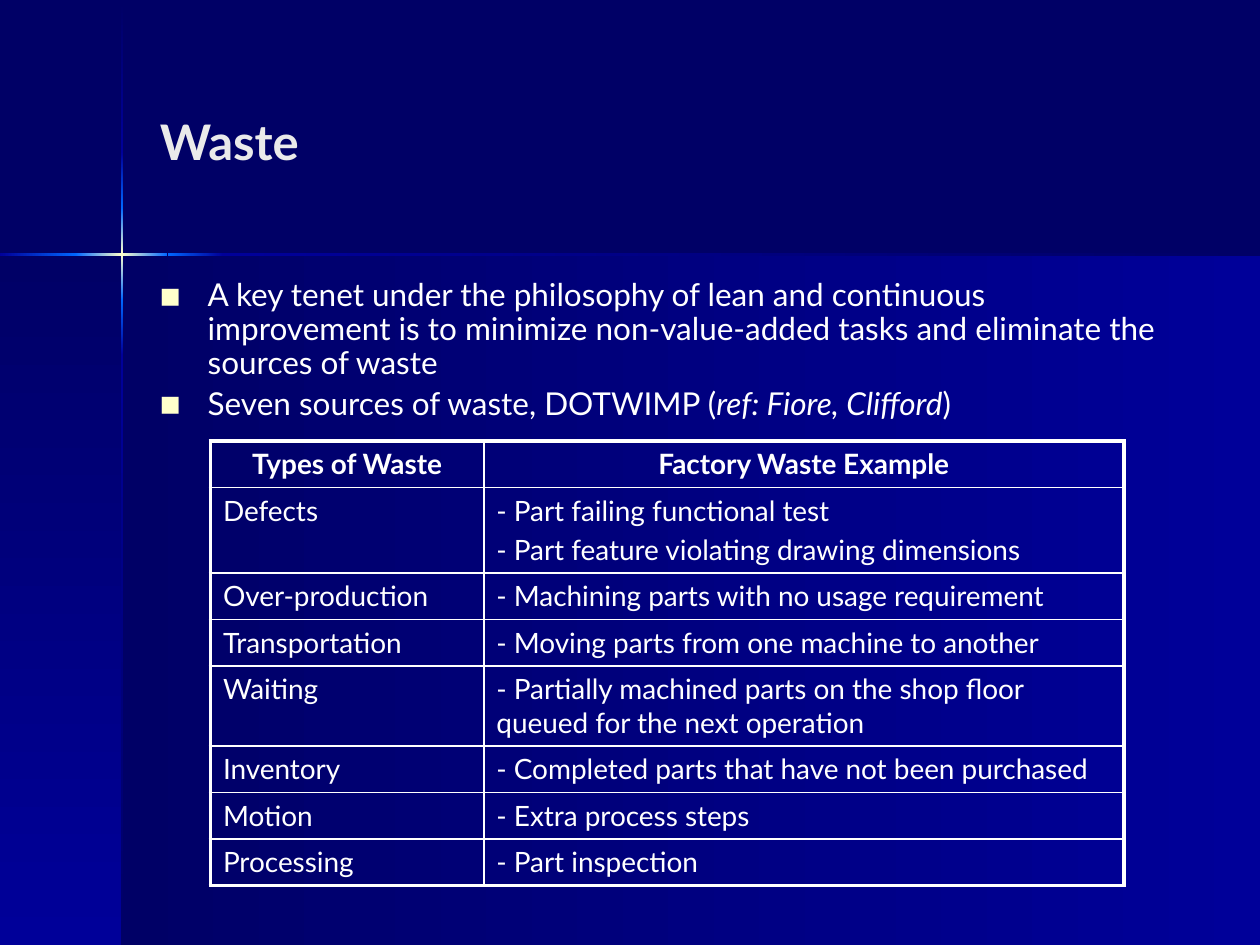
from dataclasses import dataclass
from typing import NamedTuple

from lxml.etree import SubElement
from pptx import Presentation
from pptx.dml.color import RGBColor
from pptx.enum.shapes import MSO_SHAPE
from pptx.enum.text import MSO_ANCHOR, PP_ALIGN
from pptx.oxml import parse_xml
from pptx.oxml.ns import nsdecls, qn
from pptx.util import Inches, Pt


@dataclass(frozen=True)
class Theme:
    font: str = "Lato"
    night: str = "000066"
    navy: str = "000099"
    blue: str = "0066FF"
    cream: str = "FFFFCC"
    silver: str = "EAEAEA"
    white: str = "FFFFFF"
    title: float = 28
    body: float = 18
    cell: float = 16
    thin: float = 1
    thick: float = 2.25


class Band(NamedTuple):
    left: float
    top: float
    width: float
    height: float
    stops: tuple[str, ...]
    angle: int


class Span(NamedTuple):
    text: str
    italic: bool = False


class Row(NamedTuple):
    height: float
    label: str
    notes: tuple[str, ...]


T = Theme()
DARK = (T.night, T.navy)
RISE = (T.navy, T.blue)
GLOW = (T.blue, T.cream, T.blue)
DOWN, ACROSS = 90, 0

BANDS = (
    Band(0.97, 2.02, 9.03, 5.48, DARK, ACROSS),
    Band(0, 2.02, 0.97, 5.48, DARK, DOWN),
    Band(0.96, 0.01, 0.02, 1.2, DARK, DOWN),
    Band(0.96, 2.82, 0.02, 4.68, DARK[::-1], DOWN),
    Band(1.77, 2.01, 8.23, 0.02, DARK[::-1], ACROSS),
    Band(0.96, 2.38, 0.02, 0.44, RISE[::-1], DOWN),
    Band(0.96, 1.21, 0.02, 0.44, RISE, DOWN),
    Band(0.96, 1.65, 0.02, 0.73, GLOW, DOWN),
    Band(0, 2.01, 0.61, 0.02, RISE, ACROSS),
    Band(1.33, 2.01, 0.44, 0.02, RISE[::-1], ACROSS),
    Band(0.6, 2.01, 0.73, 0.02, GLOW, ACROSS),
)

POINTS = (
    (Span("A key tenet under the philosophy of lean and continuous improvement "
          "is to minimize non-value-added tasks and eliminate the sources of waste"),),
    (Span("Seven sources of waste, DOTWIMP ("),
     Span("ref: Fiore, Clifford", True), Span(")")),
)

WIDTHS = (2.17, 5.08)
ROWS = (
    Row(0.37, "Types of Waste", ("Factory Waste Example",)),
    Row(0.67, "Defects", ("- Part failing functional test",
                          "- Part feature violating drawing dimensions")),
    Row(0.37, "Over-production", ("- Machining parts with no usage requirement",)),
    Row(0.37, "Transportation", ("- Moving parts from one machine to another",)),
    Row(0.63, "Waiting", ("- Partially machined parts on the shop floor "
                          "queued for the next operation",)),
    Row(0.37, "Inventory", ("- Completed parts that have not been purchased",)),
    Row(0.37, "Motion", ("- Extra process steps",)),
    Row(0.37, "Processing", ("- Part inspection",)),
)


def draw_band(slide, band: Band) -> None:
    shape = slide.shapes.add_shape(
        MSO_SHAPE.RECTANGLE, Inches(band.left), Inches(band.top),
        Inches(band.width), Inches(band.height))
    shape.shadow.inherit = False
    shape.line.fill.background()
    last = len(band.stops) - 1
    stops = "".join(
        f'<a:gs pos="{100000 * i // last}"><a:srgbClr val="{color}"/></a:gs>'
        for i, color in enumerate(band.stops))
    fill = parse_xml(
        f'<a:gradFill {nsdecls("a")}><a:gsLst>{stops}</a:gsLst>'
        f'<a:lin ang="{band.angle * 60000}" scaled="0"/></a:gradFill>')
    shape.element.spPr.find(qn("a:prstGeom")).addnext(fill)


def add_run(para, text: str, size: float, color: str,
            bold: bool = False, italic: bool = False) -> None:
    run = para.add_run()
    run.text = text
    font = run.font
    font.name, font.size = T.font, Pt(size)
    font.bold, font.italic = bold, italic
    font.color.rgb = RGBColor.from_string(color)


def add_frame(slide, top: float, height: float):
    frame = slide.shapes.add_textbox(
        Inches(1.17), Inches(top), Inches(8.25), Inches(height)).text_frame
    frame.word_wrap = True
    return frame


def next_para(frame, index: int, size: float):
    para = frame.add_paragraph() if index else frame.paragraphs[0]
    para.space_before = Pt(size * 0.2)
    return para


def add_bullet(para) -> None:
    props = para._p.get_or_add_pPr()
    props.set("marL", str(Inches(0.38)))
    props.set("indent", str(-Inches(0.38)))
    color = SubElement(props, qn("a:buClr"))
    SubElement(color, qn("a:srgbClr"), val=T.cream)
    SubElement(props, qn("a:buSzPct"), val="70000")
    SubElement(props, qn("a:buFont"), typeface=T.font)
    SubElement(props, qn("a:buChar"), char="■")


def draw_points(slide) -> None:
    frame = add_frame(slide, 2.17, 1.33)
    for i, spans in enumerate(POINTS):
        para = next_para(frame, i, T.body)
        para.line_spacing = 0.9
        add_bullet(para)
        for span in spans:
            add_run(para, span.text, T.body, T.white, italic=span.italic)


def set_edges(cell, outer: dict[str, bool]) -> None:
    props = cell._tc.get_or_add_tcPr()
    for side, thick in outer.items():
        width = Pt(T.thick if thick else T.thin)
        line = SubElement(props, qn(f"a:ln{side}"), w=str(width))
        fill = SubElement(line, qn("a:solidFill"))
        SubElement(fill, qn("a:srgbClr"), val=T.white)
    cell.fill.background()


def draw_table(slide) -> None:
    table = slide.shapes.add_table(
        len(ROWS), len(WIDTHS), Inches(1.67), Inches(3.5),
        Inches(sum(WIDTHS)), Inches(sum(row.height for row in ROWS))).table
    table.first_row = table.horz_banding = False
    for col, width in zip(table.columns, WIDTHS):
        col.width = Inches(width)
    for r, row in enumerate(ROWS):
        table.rows[r].height = Inches(row.height)
        for c, lines in enumerate(((row.label,), row.notes)):
            cell = table.cell(r, c)
            set_edges(cell, {"L": c == 0, "R": c == len(WIDTHS) - 1,
                             "T": r == 0, "B": r == len(ROWS) - 1})
            for i, text in enumerate(lines):
                para = next_para(cell.text_frame, i, T.cell)
                para.alignment = PP_ALIGN.LEFT if r else PP_ALIGN.CENTER
                add_run(para, text, T.cell, T.white, bold=r == 0)


def main() -> None:
    deck = Presentation()
    deck.slide_width, deck.slide_height = Inches(10), Inches(7.5)
    slide = deck.slides.add_slide(deck.slide_layouts[6])
    back = slide.background.fill
    back.solid()
    back.fore_color.rgb = RGBColor.from_string(T.night)
    for band in BANDS:
        draw_band(slide, band)
    title = add_frame(slide, 0.33, 1.57)
    title.vertical_anchor = MSO_ANCHOR.MIDDLE
    add_run(title.paragraphs[0], "Waste", T.title, T.silver, bold=True)
    draw_points(slide)
    draw_table(slide)
    deck.save("out.pptx")


if __name__ == "__main__":
    main()
